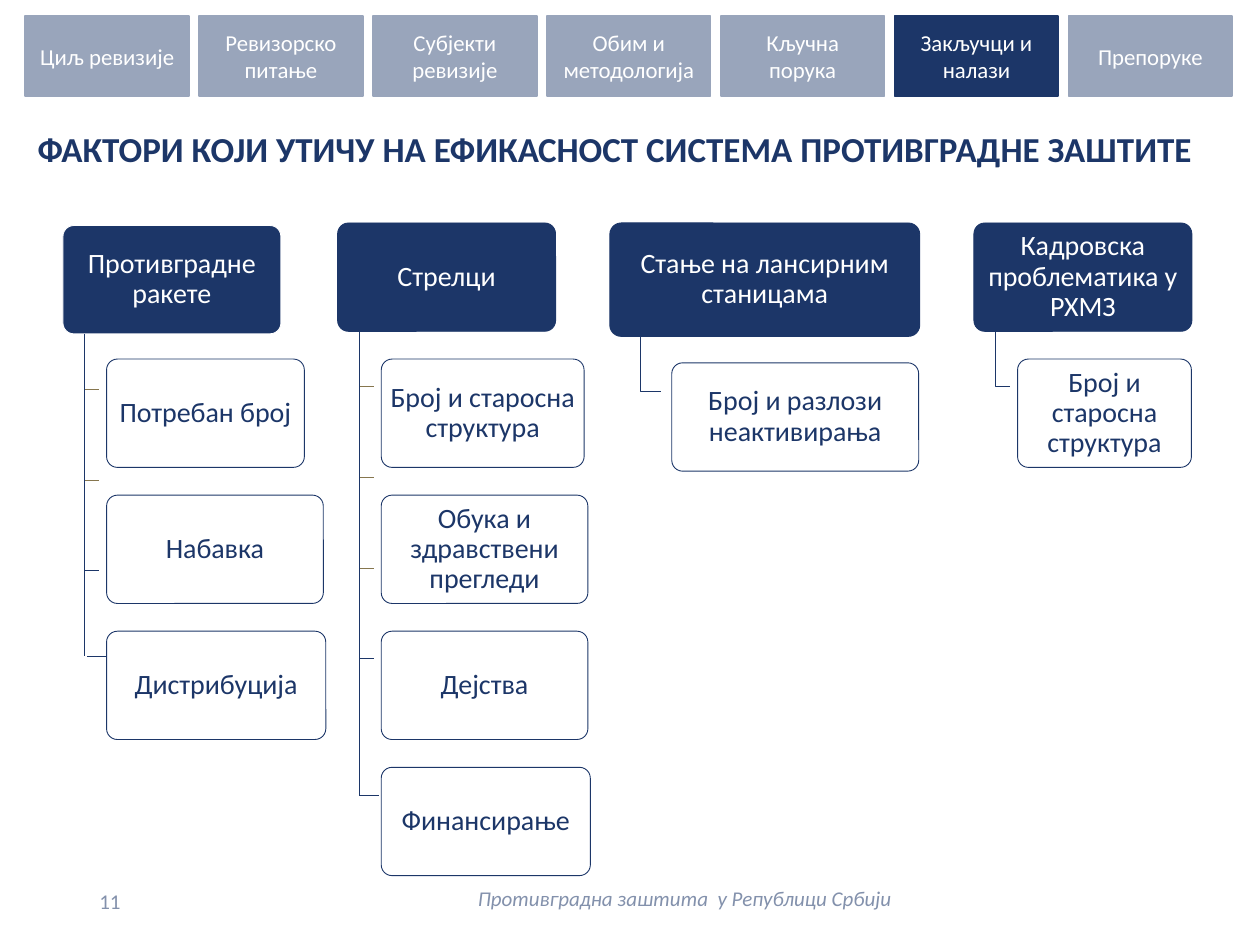
from lxml.etree import SubElement
from pptx import Presentation
from pptx.dml.color import RGBColor
from pptx.enum.shapes import MSO_CONNECTOR, MSO_SHAPE
from pptx.enum.text import MSO_ANCHOR, PP_ALIGN
from pptx.oxml.ns import qn
from pptx.util import Inches, Pt

NAVY = RGBColor(0x1C, 0x36, 0x68)
STEEL = RGBColor(0x99, 0xA5, 0xBB)
MUTED = RGBColor(0x83, 0x91, 0xAC)
GOLD = RGBColor(0x86, 0x76, 0x4E)
WHITE = RGBColor(0xFF, 0xFF, 0xFF)

SECTIONS = [
    "Циљ ревизије", "Ревизорско питање", "Субјекти ревизије",
    "Обим и методологија", "Кључна порука", "Закључци и налази", "Препоруке",
]
CURRENT_SECTION = "Закључци и налази"
SECTION_STEP = 1.38

FACTORS = [
    ("Противградне ракете", (0.5, 1.79, 1.73, 0.86), WHITE, 2.85,
     [("Потребан број", 1.57), ("Набавка", 1.72), ("Дистрибуција", 1.74)]),
    ("Стрелци", (2.68, 1.77, 1.73, 0.86), NAVY, 2.85,
     [("Број и старосна структура", 1.61),
      ("Обука и здравствени прегледи", 1.64),
      ("Дејства", 1.64), ("Финансирање", 1.66)]),
    ("Стање на лансирним станицама", (4.84, 1.77, 2.46, 0.9), NAVY, 2.88,
     [("Број и разлози неактивирања", 1.96)]),
    ("Кадровска проблематика у РХМЗ", (7.73, 1.77, 1.73, 0.86), NAVY, 2.85,
     [("Број и старосна структура", 1.38)]),
]
CARD_HEIGHT = 0.86
CARD_STEP = 1.08
FIRST_DROP = 0.44
DROP_STEP = 0.72

EXTENSIONS = [
    (0.67, 4.21, 0.67, 5.21), (2.85, 4.9, 2.85, 6.31),
    (0.69, 5.21, 0.85, 5.21), (2.85, 6.31, 3.01, 6.31),
]


class FactorSlide:
    font = "Calibri"
    thin = Pt(0.5)

    def __init__(self, slide):
        self.slide = slide

    def add_text(self, shape, text, size, color, align=PP_ALIGN.CENTER,
                 anchor=MSO_ANCHOR.MIDDLE, bold=False, italic=False):
        frame = shape.text_frame
        frame.word_wrap = True
        frame.vertical_anchor = anchor
        paragraph = frame.paragraphs[0]
        paragraph.alignment = align
        run = paragraph.add_run()
        run.text = text
        run.font.name = self.font
        run.font.size = Pt(size)
        run.font.color.rgb = color
        run.font.bold = bold
        run.font.italic = italic
        return frame

    def box(self, kind, bounds, fill, outline, weight):
        shape = self.slide.shapes.add_shape(kind, *map(Inches, bounds))
        shape.shadow.inherit = False
        shape.fill.solid()
        shape.fill.fore_color.rgb = fill
        shape.line.color.rgb = outline
        shape.line.width = weight
        return shape

    def tab(self, text, bounds, fill):
        tab = self.box(MSO_SHAPE.RECTANGLE, bounds, fill, fill, Pt(1))
        self.add_text(tab, text, 13, WHITE)

    def card(self, text, bounds, fill, outline, color):
        card = self.box(MSO_SHAPE.ROUNDED_RECTANGLE, bounds, fill, outline, self.thin)
        card.adjustments[0] = 0.1
        frame = self.add_text(card, text, 16, color)
        frame.margin_left = frame.margin_right = Inches(0.03)
        frame.margin_top = frame.margin_bottom = Inches(0.02)
        frame.paragraphs[0].line_spacing = 0.9

    def label(self, text, bounds, size, color, **style):
        label = self.slide.shapes.add_textbox(*map(Inches, bounds))
        return self.add_text(label, text, size, color, **style)

    def branch(self, x, y, drop, reach, color):
        builder = self.slide.shapes.build_freeform(Inches(x), Inches(y))
        corner = (Inches(x), Inches(y + drop))
        end = (Inches(x + reach), Inches(y + drop))
        builder.add_line_segments([corner, end], close=False)
        branch = builder.convert_to_shape()
        branch.shadow.inherit = False
        branch.fill.background()
        branch.line.color.rgb = color
        branch.line.width = self.thin

    def line(self, ends):
        line = self.slide.shapes.add_connector(
            MSO_CONNECTOR.STRAIGHT, *map(Inches, ends))
        line.line.color.rgb = NAVY
        line.line.width = self.thin
        SubElement(line._element.spPr, qn("a:effectLst"))

    def factor(self, title, bounds, outline, first_top, items):
        left, top, width, height = bounds
        self.card(title, bounds, NAVY, outline, WHITE)
        for index, (item, item_width) in enumerate(items):
            color = NAVY if index == len(items) - 1 else GOLD
            self.branch(left + 0.1 * width, top + height,
                        FIRST_DROP + index * DROP_STEP, 0.065 * width, color)
            item_bounds = (left + 0.2 * width, first_top + index * CARD_STEP,
                           item_width, CARD_HEIGHT)
            self.card(item, item_bounds, WHITE, NAVY, NAVY)


def main():
    deck = Presentation()
    deck.slide_width = Inches(10)
    deck.slide_height = Inches(7.5)
    page = FactorSlide(deck.slides.add_slide(deck.slide_layouts[6]))

    for factor in FACTORS:
        page.factor(*factor)

    footer = page.label("Противградна заштита  у Републици Србији",
                        (3.31, 6.95, 4.25, 0.55), 12, MUTED, italic=True)
    footer.margin_bottom = Inches(0.25)
    page.label("11", (0.69, 6.95, 2.25, 0.4), 12, MUTED, align=PP_ALIGN.LEFT)
    page.label("ФАКТОРИ КОЈИ УТИЧУ НА ЕФИКАСНОСТ СИСТЕМА ПРОТИВГРАДНЕ ЗАШТИТЕ",
               (0.2, 0.96, 9.8, 0.44), 20, NAVY, align=PP_ALIGN.LEFT,
               anchor=MSO_ANCHOR.TOP, bold=True)

    for index, section in enumerate(SECTIONS):
        fill = NAVY if section == CURRENT_SECTION else STEEL
        page.tab(section, (0.2 + index * SECTION_STEP, 0.13, 1.3, 0.63), fill)

    for ends in EXTENSIONS:
        page.line(ends)

    deck.save("out.pptx")


if __name__ == "__main__":
    main()
